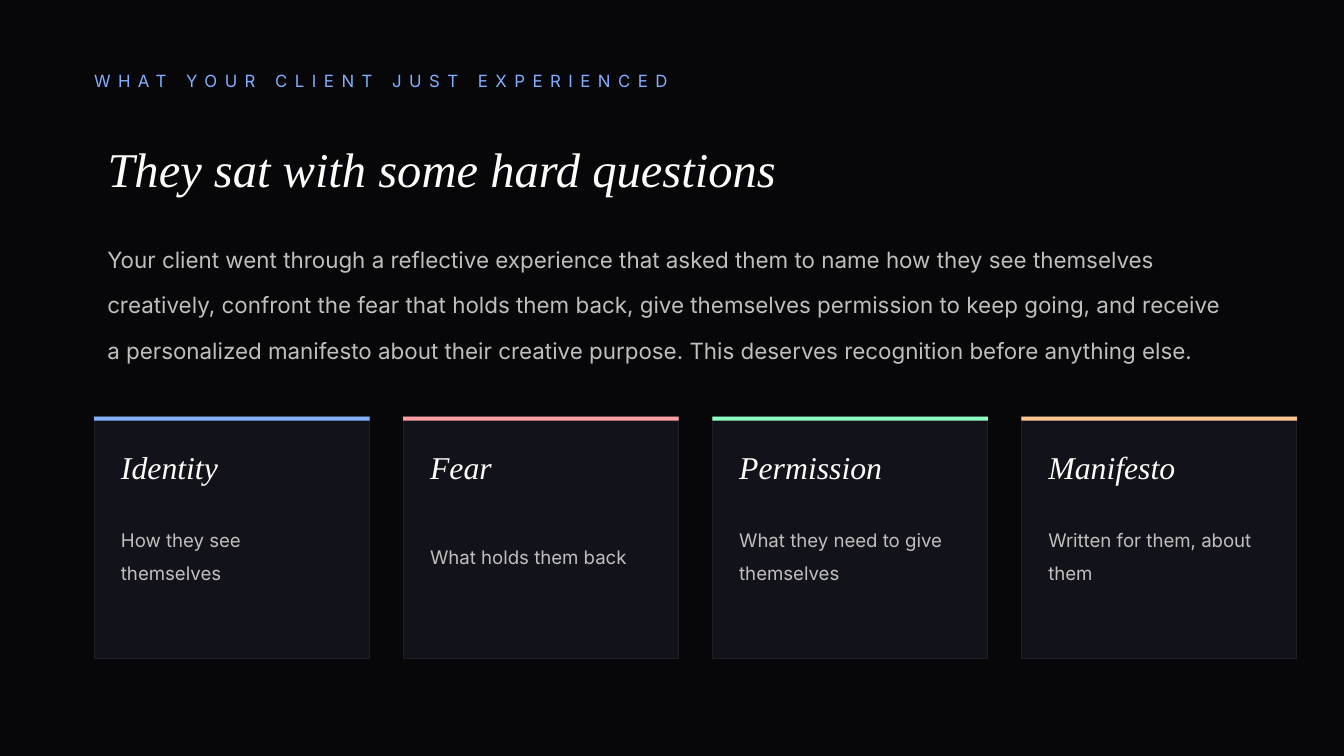
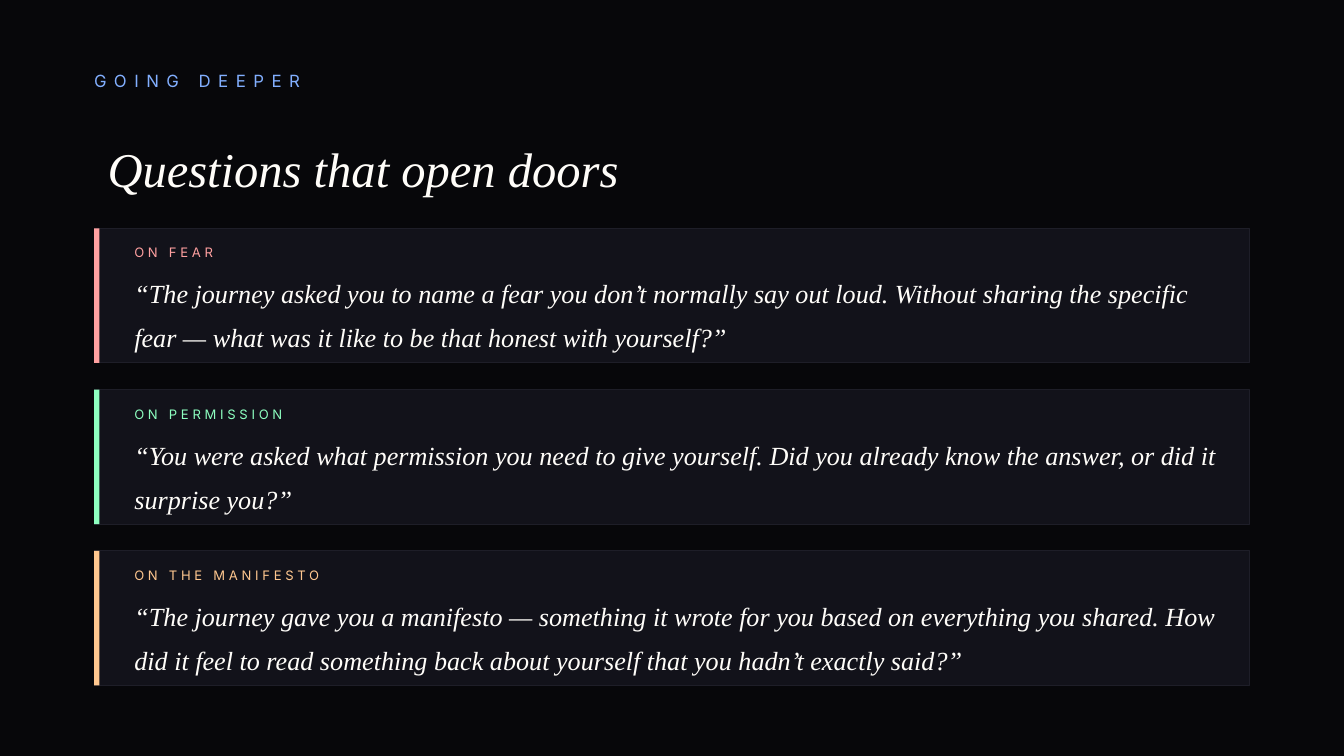
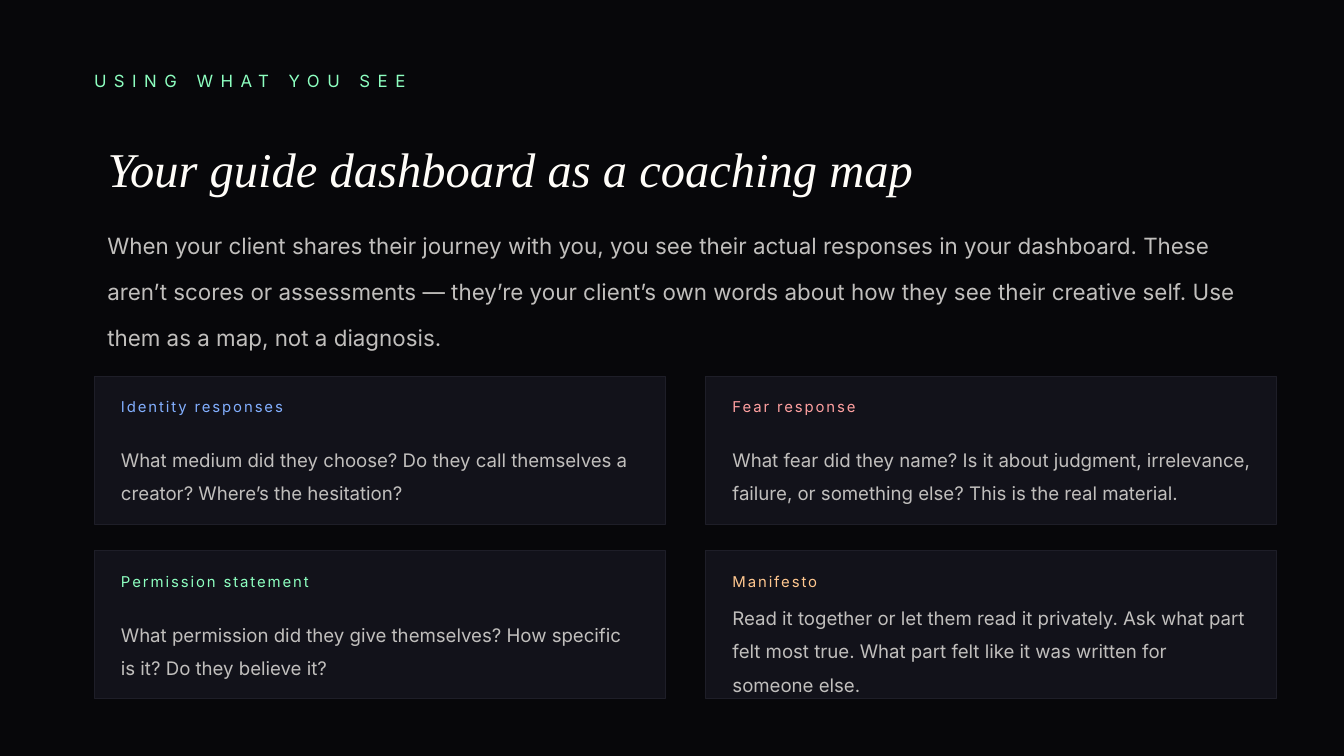
from pptx import Presentation, util as u
from pptx.dml.color import RGBColor
from pptx.enum import shapes, text

BACKGROUND, PANEL, EDGE = "07070A", "12121A", "1E1E28"
WHITE, GREY = "FFFDF9", "C1BFBD"
BLUE, RED, GREEN, ORANGE = "82AFFF", "FFA0A0", "8DFFC0", "FFC78F"
SERIF, SANS = "Times New Roman", "Inter"
LEFT, WIDTH = 0.7, 8.6
TITLE_ONLY = 5

TITLE = {"name": SERIF, "size": u.Pt(26), "italic": True}
CARD_HEADING = {"name": SERIF, "size": u.Pt(17), "italic": True}
QUOTE = {"name": SERIF, "size": u.Pt(14), "italic": True}
INTRO = {"name": SANS, "size": u.Pt(12)}
BODY = {"name": SANS, "size": u.Pt(10)}
EYEBROW = {"name": SANS, "size": u.Pt(9)}
TOPIC = {"name": SANS, "size": u.Pt(8)}
LABEL = {"name": SANS, "size": u.Pt(7)}


def rgb(value):
    return RGBColor.from_string(value)


def inches(area):
    return [u.Inches(length) for length in area]


def write(box, wording, style, color, tracking=0, spacing=None, inset=0):
    frame = box.text_frame
    margins = dict.fromkeys(
        ["margin_left", "margin_right", "margin_top", "margin_bottom"], u.Inches(inset))
    if inset:
        margins["margin_top"] = margins["margin_bottom"] = u.Inches(inset / 2)
    layout = {**margins, "word_wrap": True, "auto_size": text.MSO_AUTO_SIZE.NONE,
              "vertical_anchor": text.MSO_ANCHOR.MIDDLE}
    for name, value in layout.items():
        setattr(frame, name, value)
    para = frame.paragraphs[0]
    para.alignment = text.PP_ALIGN.LEFT
    if spacing:
        para.line_spacing = spacing
    span = para.add_run()
    span.text = wording
    for name, value in style.items():
        setattr(span.font, name, value)
    span.font.color.rgb = rgb(color)
    if tracking:
        span._r.get_or_add_rPr().set("spc", str(tracking * 100))


def add_text(page, area, wording, style, color, **options):
    write(page.shapes.add_textbox(*inches(area)), wording, style, color, **options)


def add_block(page, area, fill, edge=None):
    block = page.shapes.add_shape(shapes.MSO_SHAPE.RECTANGLE, *inches(area))
    block.shadow.inherit = False
    block.fill.solid()
    block.fill.fore_color.rgb = rgb(fill)
    if edge:
        block.line.color.rgb = rgb(edge)
        block.line.width = u.Pt(0.5)
    else:
        block.line.fill.background()


def add_page(deck, eyebrow, color, heading):
    page = deck.slides.add_slide(deck.slide_layouts[TITLE_ONLY])
    page.background.fill.solid()
    page.background.fill.fore_color.rgb = rgb(BACKGROUND)
    title = page.shapes.title
    title.left, title.top, title.width, title.height = inches((LEFT, 0.9, 8, 0.7))
    write(title, heading, TITLE, WHITE, inset=0.1)
    add_text(page, (LEFT, 0.4, 8, 0.4), eyebrow, EYEBROW, color, tracking=4)
    return page


def add_intro(page, height, wording):
    add_text(page, (LEFT, 1.7, WIDTH, height), wording, INTRO, GREY, spacing=1.7, inset=0.1)


def add_step_card(page, left, color, heading, wording):
    top, width = 3.1, 2.05
    add_block(page, (left, top, width, 1.8), PANEL, EDGE)
    add_block(page, (left, top, width, 0.03), color)
    add_text(page, (left + 0.2, top + 0.2, width - 0.4, 0.35), heading, CARD_HEADING, WHITE)
    add_text(page, (left + 0.2, top + 0.6, width - 0.4, 0.8), wording, BODY, GREY, spacing=1.5)


def add_question(page, top, color, label, wording):
    add_block(page, (LEFT, top, WIDTH, 1), PANEL, EDGE)
    add_block(page, (LEFT, top, 0.04, 1), color)
    add_text(page, (1, top + 0.08, 8, 0.2), label, LABEL, color, tracking=2)
    add_text(page, (1, top + 0.3, 8.1, 0.6), wording, QUOTE, WHITE, spacing=1.4)


def add_response_card(page, left, top, color, topic, wording):
    width = 4.25
    add_block(page, (left, top, width, 1.1), PANEL, EDGE)
    add_text(page, (left + 0.2, top + 0.1, width - 0.4, 0.25), topic, TOPIC, color, tracking=1)
    add_text(page, (left + 0.2, top + 0.38, width - 0.4, 0.65), wording, BODY, GREY, spacing=1.5)


def build_experience(deck):
    page = add_page(deck, "WHAT YOUR CLIENT JUST EXPERIENCED", BLUE,
                    "They sat with some hard questions")
    add_intro(page, 1, "Your client went through a reflective experience that asked them to name "
              "how they see themselves creatively, confront the fear that holds them back, give "
              "themselves permission to keep going, and receive a personalized manifesto about "
              "their creative purpose. This deserves recognition before anything else.")
    steps = [
        (BLUE, "Identity", "How they see themselves"),
        (RED, "Fear", "What holds them back"),
        (GREEN, "Permission", "What they need to give themselves"),
        (ORANGE, "Manifesto", "Written for them, about them"),
    ]
    for column, step in enumerate(steps):
        add_step_card(page, LEFT + 2.3 * column, *step)


def build_questions(deck):
    page = add_page(deck, "GOING DEEPER", BLUE, "Questions that open doors")
    questions = [
        (RED, "ON FEAR", "“The journey asked you to name a fear you don’t normally say out loud. "
         "Without sharing the specific fear — what was it like to be that honest with yourself?”"),
        (GREEN, "ON PERMISSION", "“You were asked what permission you need to give yourself. "
         "Did you already know the answer, or did it surprise you?”"),
        (ORANGE, "ON THE MANIFESTO", "“The journey gave you a manifesto — something it wrote for "
         "you based on everything you shared. How did it feel to read something back about "
         "yourself that you hadn’t exactly said?”"),
    ]
    for row, question in enumerate(questions):
        add_question(page, 1.7 + 1.2 * row, *question)


def build_dashboard(deck):
    page = add_page(deck, "USING WHAT YOU SEE", GREEN, "Your guide dashboard as a coaching map")
    add_intro(page, 0.8, "When your client shares their journey with you, you see their actual "
              "responses in your dashboard. These aren’t scores or assessments — they’re your "
              "client’s own words about how they see their creative self. Use them as a map, "
              "not a diagnosis.")
    responses = [
        (BLUE, "Identity responses", "What medium did they choose? Do they call themselves a "
         "creator? Where’s the hesitation?"),
        (RED, "Fear response", "What fear did they name? Is it about judgment, irrelevance, "
         "failure, or something else? This is the real material."),
        (GREEN, "Permission statement", "What permission did they give themselves? How specific "
         "is it? Do they believe it?"),
        (ORANGE, "Manifesto", "Read it together or let them read it privately. Ask what part "
         "felt most true. What part felt like it was written for someone else."),
    ]
    for index, response in enumerate(responses):
        row, column = divmod(index, 2)
        add_response_card(page, LEFT + 4.55 * column, 2.8 + 1.3 * row, *response)


def main():
    deck = Presentation()
    deck.slide_width, deck.slide_height = u.Inches(10), u.Inches(10 * 9 / 16)
    build_experience(deck)
    build_questions(deck)
    build_dashboard(deck)
    deck.save("out.pptx")


if __name__ == "__main__":
    main()
